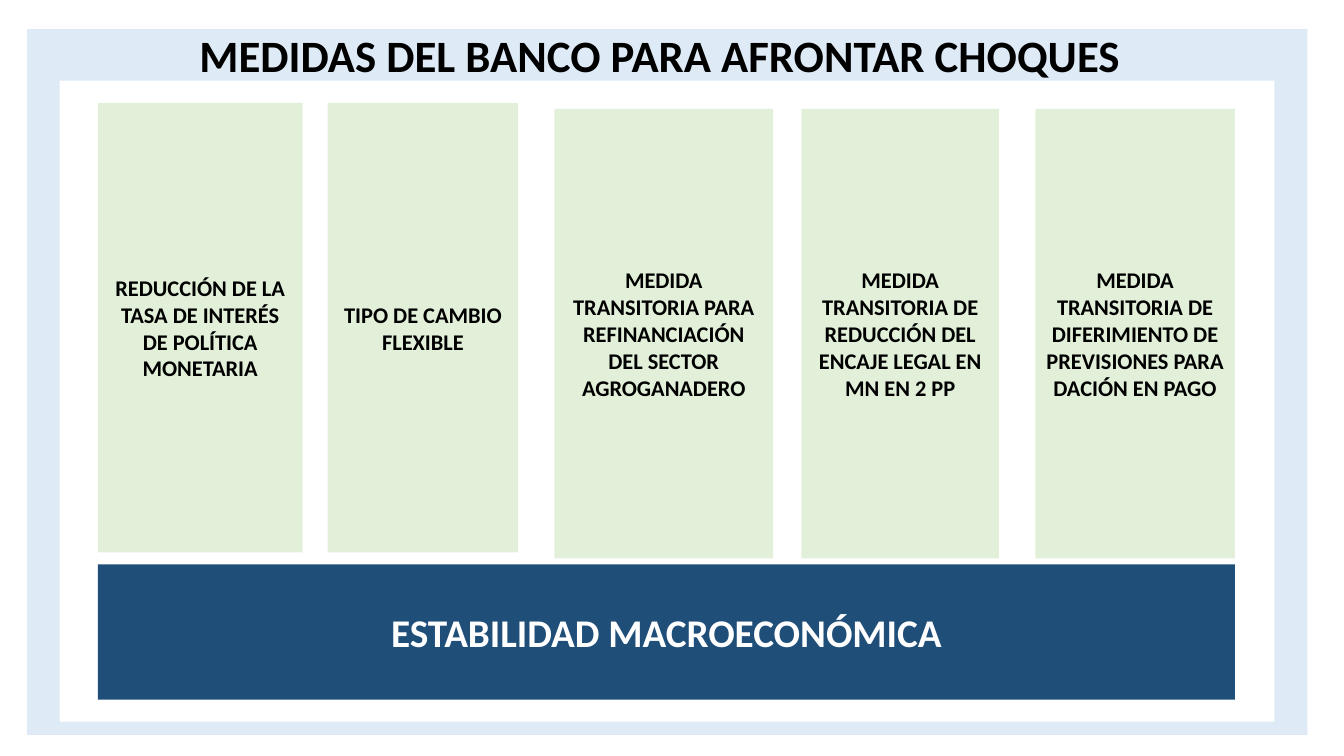
"""Build the slide of bank measures resting on macroeconomic stability."""
from pptx import Presentation
from pptx import util as u
from pptx.dml.color import RGBColor
from pptx.enum import shapes, text

WIDTH, HEIGHT = u.Inches(13.33), u.Inches(7.5)
BLACK = RGBColor(0x00, 0x00, 0x00)
WHITE = RGBColor(0xFF, 0xFF, 0xFF)
PALE_BLUE = RGBColor(0xDE, 0xEB, 0xF7)
PALE_GREEN = RGBColor(0xE2, 0xF0, 0xD9)
NAVY = RGBColor(0x1F, 0x4E, 0x79)

LEFT = 7.28
PILLAR_HEIGHT = 59.47
HIGH, LOW = 13.6, 14.4
PILLARS = [
    (LEFT, HIGH, 15.23, "REDUCCIÓN DE LA TASA DE INTERÉS DE POLÍTICA MONETARIA"),
    (24.38, HIGH, 14.18, "TIPO DE CAMBIO FLEXIBLE"),
    (41.25, LOW, 16.28,
     "MEDIDA TRANSITORIA PARA REFINANCIACIÓN\nDEL SECTOR AGROGANADERO"),
    (59.63, LOW, 14.7,
     "MEDIDA TRANSITORIA DE REDUCCIÓN DEL ENCAJE LEGAL EN MN EN 2 PP"),
    (77.03, LOW, 14.85,
     "MEDIDA TRANSITORIA DE DIFERIMIENTO DE PREVISIONES PARA DACIÓN EN PAGO"),
]


def place(x, y, w, h):
    """Turn percentages of the slide into lengths."""
    return [round(side * share / 100)
            for side, share in zip((WIDTH, HEIGHT) * 2, (x, y, w, h))]


def write(s, content, size=16, color=BLACK, align=text.PP_ALIGN.CENTER,
          anchor=text.MSO_ANCHOR.MIDDLE):
    """Write bold text in a shape, one paragraph per line."""
    tf = s.text_frame
    tf.word_wrap = True
    tf.vertical_anchor = anchor
    tf.text = content
    for p in tf.paragraphs:
        p.alignment = align
        for r in p.runs:
            r.font.name = "Calibri"
            r.font.size = u.Pt(size)
            r.font.bold = True
            r.font.color.rgb = color


def add_block(sp, box, fill):
    """Add a plain filled rectangle."""
    s = sp.add_shape(shapes.MSO_SHAPE.RECTANGLE, *place(*box))
    s.shadow.inherit = False
    s.fill.solid()
    s.fill.fore_color.rgb = fill
    s.line.fill.background()
    return s


def add_title(sp, box, content):
    """Add the slide heading."""
    s = sp.add_textbox(*place(*box))
    write(s, content, size=32, align=text.PP_ALIGN.LEFT,
          anchor=text.MSO_ANCHOR.TOP)


def main():
    """Build and save the slide."""
    prs = Presentation()
    prs.slide_width, prs.slide_height = WIDTH, HEIGHT
    sp = prs.slides.add_slide(prs.slide_layouts[6]).shapes
    add_block(sp, (2.03, 3.87, 95.25, 93.33), PALE_BLUE)
    add_title(sp, (14.1, 3.07, 85.9, 8.53), "MEDIDAS DEL BANCO PARA AFRONTAR CHOQUES")
    add_block(sp, (4.43, 10.67, 90.4, 84.8), WHITE)
    for x, y, w, label in PILLARS:
        write(add_block(sp, (x, y, w, PILLAR_HEIGHT), PALE_GREEN), label)
    base = add_block(sp, (LEFT, 74.67, 84.6, 17.87), NAVY)
    write(base, "ESTABILIDAD MACROECONÓMICA", size=28, color=WHITE)
    prs.save("out.pptx")


if __name__ == "__main__":
    main()
